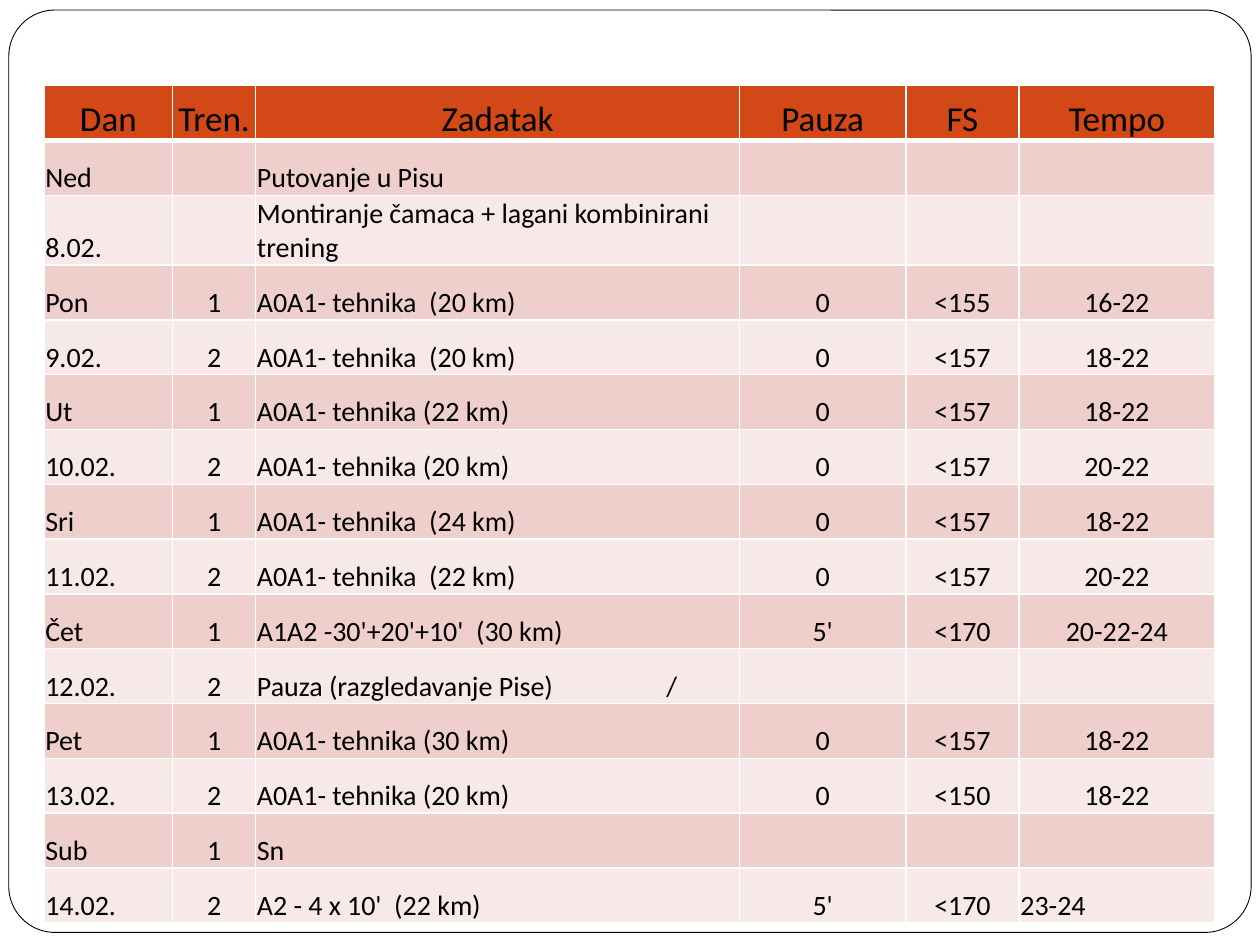
from dataclasses import dataclass
from typing import NamedTuple

from lxml import etree
from pptx import Presentation
from pptx.dml.color import RGBColor
from pptx.enum.shapes import MSO_SHAPE
from pptx.enum.text import MSO_ANCHOR, PP_ALIGN
from pptx.oxml.ns import qn
from pptx.util import Inches, Pt

ROUND = MSO_SHAPE.ROUNDED_RECTANGLE
BOTTOM = MSO_ANCHOR.BOTTOM
LEFT, CENTER = PP_ALIGN.LEFT, PP_ALIGN.CENTER


@dataclass(frozen=True)
class Theme:
    font: str = "Calibri"
    ink: str = "000000"
    paper: str = "FFFFFF"
    head: str = "D34817"
    bands: tuple[str, str] = ("EFCFCC", "F7E9E8")
    head_size: int = 20
    body_size: int = 16
    rule: int = 1
    head_rule: int = 3
    frame_rule: float = 0.5


class Column(NamedTuple):
    title: str
    width: float
    align: PP_ALIGN


class Session(NamedTuple):
    day: str
    number: str
    task: str
    pause: str = ""
    pulse: str = ""
    tempo: str = ""


THEME = Theme()
COLUMNS = [
    Column("Dan", 1.02, LEFT),
    Column("Tren.", 0.66, CENTER),
    Column("Zadatak", 3.84, LEFT),
    Column("Pauza", 1.32, CENTER),
    Column("FS", 0.9, CENTER),
    Column("Tempo", 1.55, CENTER),
]
SESSIONS = [
    Session("Ned", "", "Putovanje u Pisu"),
    Session("8.02.", "", "Montiranje čamaca + lagani kombinirani trening"),
    Session("Pon", "1", "A0A1- tehnika  (20 km)", "0", "<155", "16-22"),
    Session("9.02.", "2", "A0A1- tehnika  (20 km)", "0", "<157", "18-22"),
    Session("Ut", "1", "A0A1- tehnika (22 km)", "0", "<157", "18-22"),
    Session("10.02.", "2", "A0A1- tehnika (20 km)", "0", "<157", "20-22"),
    Session("Sri", "1", "A0A1- tehnika  (24 km)", "0", "<157", "18-22"),
    Session("11.02.", "2", "A0A1- tehnika  (22 km)", "0", "<157", "20-22"),
    Session("Čet", "1", "A1A2 -30'+20'+10'  (30 km)", "5'", "<170", "20-22-24"),
    Session("12.02.", "2", "Pauza (razgledavanje Pise)\t/"),
    Session("Pet", "1", "A0A1- tehnika (30 km)", "0", "<157", "18-22"),
    Session("13.02.", "2", "A0A1- tehnika (20 km)", "0", "<150", "18-22"),
    Session("Sub", "1", "Sn"),
    Session("14.02.", "2", "A2 - 4 x 10'  (22 km)", "5'", "<170", "23-24"),
]
SLASH_TAB = Inches(3.25)


def color(code: str) -> RGBColor:
    return RGBColor.from_string(code)


def draw_frame(slide) -> None:
    frame = slide.shapes.add_shape(
        ROUND, Inches(0.07), Inches(0.08), Inches(9.86), Inches(7.32))
    frame.adjustments[0] = 0.05
    frame.shadow.inherit = False
    frame.fill.solid()
    frame.fill.fore_color.rgb = color(THEME.paper)
    frame.line.color.rgb = color(THEME.ink)
    frame.line.width = Pt(THEME.frame_rule)


def set_edges(cell, top: int, bottom: int) -> None:
    """Rule all four sides of a cell; must run before its fill is set."""
    props = cell._tc.get_or_add_tcPr()
    widths = {"lnL": THEME.rule, "lnR": THEME.rule, "lnT": top, "lnB": bottom}
    for side, width in widths.items():
        edge = etree.SubElement(props, qn(f"a:{side}"), w=str(Pt(width)))
        fill = etree.SubElement(edge, qn("a:solidFill"))
        etree.SubElement(fill, qn("a:srgbClr"), val=THEME.paper)


def add_tab(para, place: int) -> None:
    tabs = etree.SubElement(para._p.get_or_add_pPr(), qn("a:tabLst"))
    etree.SubElement(tabs, qn("a:tab"), pos=str(place), algn="l")


def fill_cell(cell, text: str, size: int, align: PP_ALIGN, fill: str) -> None:
    cell.margin_left = cell.margin_right = cell.margin_top = Inches(0.01)
    cell.margin_bottom = 0
    cell.vertical_anchor = BOTTOM
    cell.fill.solid()
    cell.fill.fore_color.rgb = color(fill)
    if not text:
        return
    para = cell.text_frame.paragraphs[0]
    para.alignment = align
    if "\t" in text:
        add_tab(para, SLASH_TAB)
    run = para.add_run()
    run.text = text
    run.font.name = THEME.font
    run.font.size = Pt(size)
    run.font.bold = False
    run.font.color.rgb = color(THEME.ink)


def draw_plan(slide) -> None:
    table = slide.shapes.add_table(
        len(SESSIONS) + 1, len(COLUMNS),
        Inches(0.35), Inches(0.68), Inches(9.29), Inches(6.53)).table
    for c, column in enumerate(COLUMNS):
        table.columns[c].width = Inches(column.width)
        cell = table.cell(0, c)
        set_edges(cell, THEME.rule, THEME.head_rule)
        fill_cell(cell, column.title, THEME.head_size, CENTER, THEME.head)

    for r, session in enumerate(SESSIONS):
        top = THEME.rule if r else THEME.head_rule
        for c, (column, text) in enumerate(zip(COLUMNS, session)):
            cell = table.cell(r + 1, c)
            align = LEFT if text == "23-24" else column.align
            set_edges(cell, top, THEME.rule)
            fill_cell(cell, text, THEME.body_size, align, THEME.bands[r % 2])


def main() -> None:
    deck = Presentation()
    deck.slide_width, deck.slide_height = Inches(10), Inches(7.5)
    slide = deck.slides.add_slide(deck.slide_layouts[6])
    draw_frame(slide)
    draw_plan(slide)
    deck.save("out.pptx")


if __name__ == "__main__":
    main()
